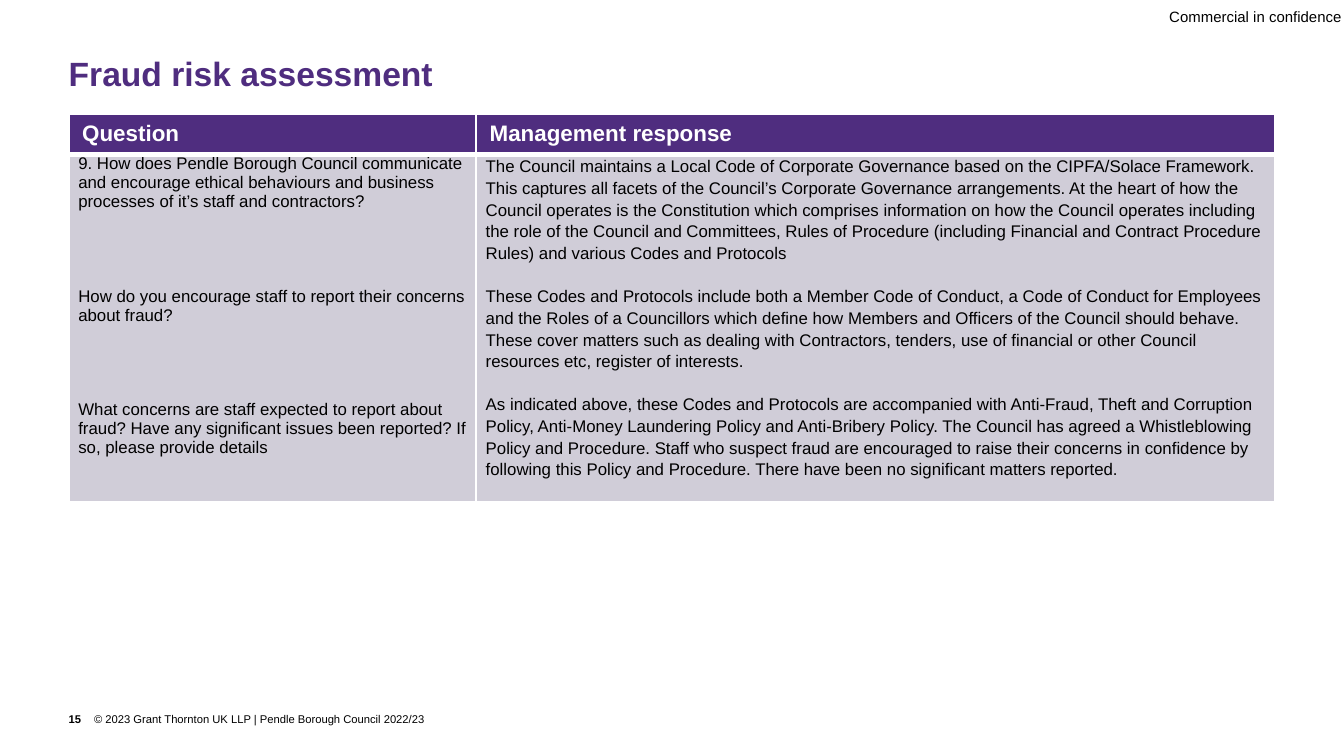
from lxml.etree import SubElement
from pptx import Presentation
from pptx.dml.color import RGBColor
from pptx.enum.text import MSO_ANCHOR as Anchor, PP_ALIGN as Align
from pptx.oxml.ns import qn
from pptx.util import Cm, Pt

PURPLE, LILAC, WHITE, BLACK = "4F2D7F", "D0CDD8", "FFFFFF", "000000"

# Content
TITLE = "Fraud risk assessment"
MARKING = "Commercial in confidence"
PAGE_NUMBER = "15"
COPYRIGHT = "© 2023 Grant Thornton UK LLP | Pendle Borough Council 2022/23"
HEADINGS = ["Question", "Management response"]
QUESTIONS = [
    "9. How does Pendle Borough Council communicate and encourage ethical behaviours "
    "and business processes of it’s staff and contractors?",
    "How do you encourage staff to report their concerns about fraud?",
    "What concerns are staff expected to report about fraud? Have any significant "
    "issues been reported? If so, please provide details",
]
RESPONSES = [
    "The Council maintains a Local Code of Corporate Governance based on the "
    "CIPFA/Solace Framework. This captures all facets of the Council’s Corporate "
    "Governance arrangements. At the heart of how the Council operates is the "
    "Constitution which comprises information on how the Council operates including "
    "the role of the Council and Committees, Rules of Procedure (including Financial "
    "and Contract Procedure Rules) and various Codes and Protocols",
    "These Codes and Protocols include both a Member Code of Conduct, a Code of Conduct "
    "for Employees and the Roles of a Councillors which define how Members and Officers "
    "of the Council should behave. These cover matters such as dealing with Contractors, "
    "tenders, use of financial or other Council resources etc, register of interests.",
    "As indicated above, these Codes and Protocols are accompanied with Anti-Fraud, "
    "Theft and Corruption Policy, Anti-Money Laundering Policy and Anti-Bribery Policy. "
    "The Council has agreed a Whistleblowing Policy and Procedure. Staff who suspect "
    "fraud are encouraged to raise their concerns in confidence by following this Policy "
    "and Procedure. There have been no significant matters reported.",
]

# Layout in cm
LEFT = 1.3
COLUMN_WIDTHS = [7.7, 15.1]
ROW_HEIGHTS = [0.69, 6.55]
TABLE_TOP = 2.16
FOOTER_TOP = 13.46


def colour(hex_string):
    return RGBColor.from_string(hex_string)


def write(frame, paragraphs, size, ink=BLACK, bold=False, align=Align.LEFT,
          spacing=1.0, gap=0):
    """Fill a text frame, leaving gap points between paragraphs."""
    frame.word_wrap = True
    for index, wording in enumerate(paragraphs):
        paragraph = frame.add_paragraph() if index else frame.paragraphs[0]
        paragraph.alignment = align
        paragraph.line_spacing = spacing
        if index:
            paragraph.space_before = Pt(gap)
        run = paragraph.add_run()
        run.text = wording
        run.font.name, run.font.size, run.font.bold = "Arial", Pt(size), bold
        run.font.color.rgb = colour(ink)


def add_label(slide, wording, left, top, width, height, size,
              anchor=Anchor.TOP, **style):
    frame = slide.shapes.add_textbox(Cm(left), Cm(top), Cm(width), Cm(height)).text_frame
    frame.margin_left = frame.margin_right = frame.margin_top = frame.margin_bottom = 0
    frame.vertical_anchor = anchor
    write(frame, [wording], size, **style)


def style_cell(cell, fill, top, bottom):
    """White borders, with top and bottom widths in points, then the fill."""
    properties = cell._tc.get_or_add_tcPr()
    for side, width in (("L", 1), ("R", 1), ("T", top), ("B", bottom)):
        line = SubElement(properties, qn(f"a:ln{side}"), w=str(Pt(width)))
        SubElement(SubElement(line, qn("a:solidFill")), qn("a:srgbClr"), val=WHITE)
    cell.fill.solid()
    cell.fill.fore_color.rgb = colour(fill)


deck = Presentation()
deck.slide_width, deck.slide_height = Cm(25.4), Cm(14.28)
slide = deck.slides.add_slide(deck.slide_layouts[6])

# Marking, title and footer
add_label(slide, MARKING, 21.4, 0, 3.96, 0.61, 8, Anchor.MIDDLE, align=Align.RIGHT)
add_label(slide, TITLE, LEFT, 1.09, sum(COLUMN_WIDTHS), 1, 18,
          ink=PURPLE, bold=True, spacing=0.9)
add_label(slide, PAGE_NUMBER, LEFT, FOOTER_TOP, 0.46, 0.25, 6, bold=True)
add_label(slide, COPYRIGHT, 1.78, FOOTER_TOP, 10.95, 0.25, 6)

# Question and response table
table = slide.shapes.add_table(2, 2, Cm(LEFT), Cm(TABLE_TOP), Cm(sum(COLUMN_WIDTHS)),
                               Cm(sum(ROW_HEIGHTS))).table
for column, width in zip(table.columns, COLUMN_WIDTHS):
    column.width = Cm(width)
for row, height in zip(table.rows, ROW_HEIGHTS):
    row.height = Cm(height)

for index, heading in enumerate(HEADINGS):
    cell = table.cell(0, index)
    style_cell(cell, PURPLE, top=1, bottom=3)
    write(cell.text_frame, [heading], 12, ink=WHITE, bold=True)

# Each response follows one blank line; questions are spread to match
for index, (paragraphs, spacing, gap) in enumerate(
        [(QUESTIONS, 1.0, 40.5), (RESPONSES, 1.15, 11.6)]):
    cell = table.cell(1, index)
    style_cell(cell, LILAC, top=3, bottom=1)
    cell.margin_left = cell.margin_right = Cm(0.18)
    cell.margin_top = cell.margin_bottom = 0
    write(cell.text_frame, paragraphs, 9, spacing=spacing, gap=gap)

deck.save("out.pptx")
